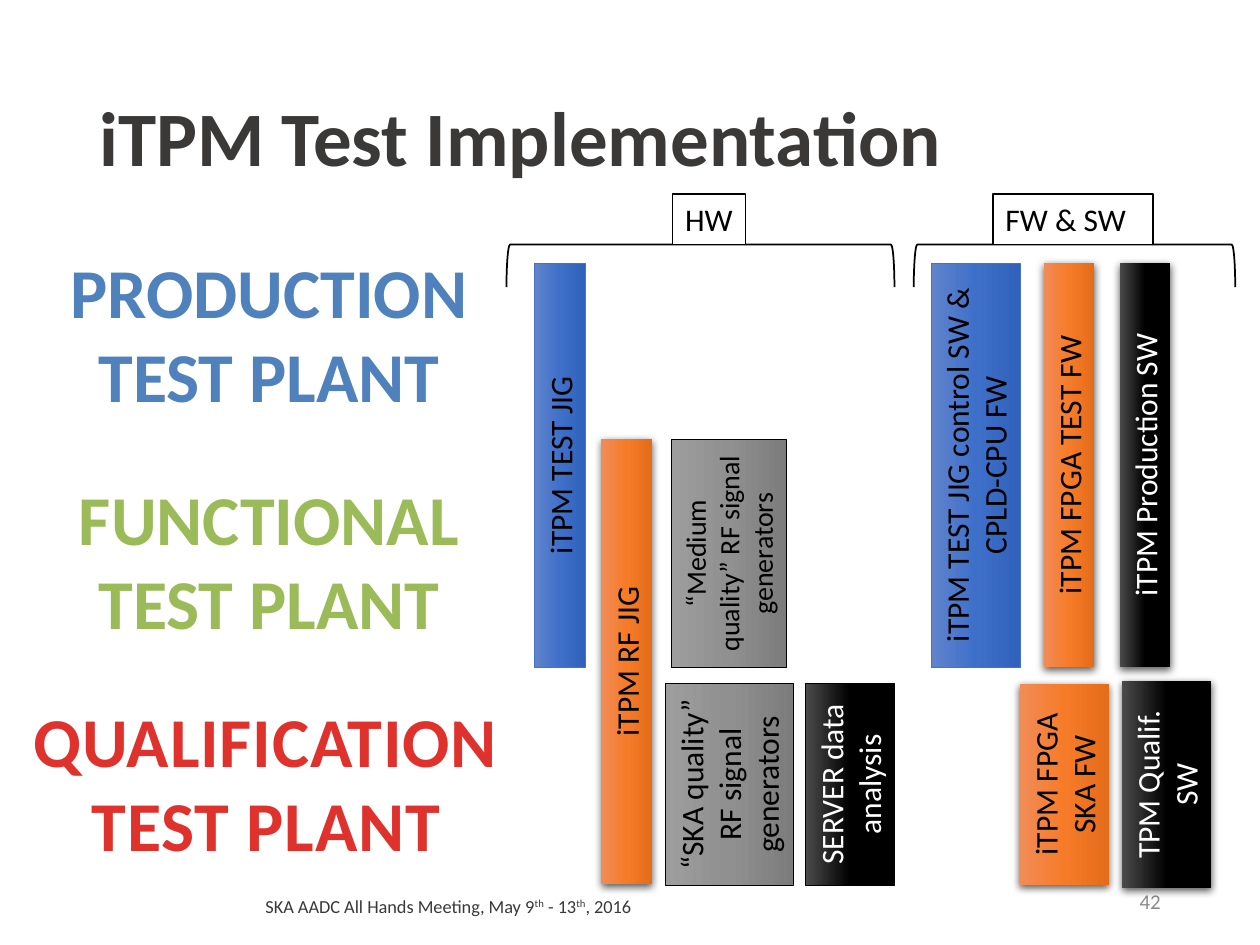
"""Build the iTPM test implementation slide: test plants beside their hardware and software parts."""
import pptx
import pptx.dml.color
import pptx.enum.shapes
import pptx.enum.text
import pptx.oxml
import pptx.util

Cm = pptx.util.Cm
Pt = pptx.util.Pt
ALIGN = pptx.enum.text.PP_ALIGN
ANCHOR = pptx.enum.text.MSO_ANCHOR
SHAPE = pptx.enum.shapes.MSO_SHAPE
NAMESPACE = 'xmlns:a="http://schemas.openxmlformats.org/drawingml/2006/main"'

COLORS = {
    "dark": "3B3838", "number": "8C8C8C", "black": "000000", "white": "FFFFFF",
    "production": "4F81BD", "functional": "9BBB59", "qualification": "E0322D",
    "blue_line": "4472C4",
}
GRADIENTS = {
    "blue": ("6183CB", "3E70CA", "3062BB"),
    "orange": ("F18C57", "F67B28", "E56C19"),
    "gray": ("9D9D9D", "909090", "7C7C7C"),
    "black": ("4B4B4B", "000000", "000000"),
}
TITLE = "iTPM Test Implementation"
PAGE_NUMBER = "42"
FOOTER = [("SKA AADC All Hands Meeting, May 9", False), ("th", True), (" - 13", False),
          ("th", True), (", 2016", False)]
PLANTS = [
    ("PRODUCTION TEST PLANT", "production", (0.76, 4.88, 9.32, 3.68), 0),
    ("QUALIFICATION TEST PLANT", "qualification", (0.3, 13.94, 10.13, 3.68), 50),
    ("FUNCTIONAL TEST PLANT", "functional", (0.76, 9.47, 9.32, 3.68), 0),
]
NARROW, WIDE = 1.02, 1.8
UPPER, LOWER = (5.3, 8.15), (13.78, 4.06)
BARS = [
    ("iTPM TEST JIG", "blue", "blue_line", 10.78, NARROW, UPPER, 18),
    ("iTPM RF JIG", "orange", None, 12.12, NARROW, (8.84, 8.99), 18),
    ("“SKA quality” RF signal generators", "gray", "black", 13.42, 2.57, LOWER, 18),
    ("“Medium quality” RF signal generators", "gray", "black", 13.54, 2.31, (8.86, 4.6), 16),
    ("SERVER data analysis", "black", "black", 16.24, WIDE, LOWER, 18),
    ("iTPM TEST JIG control SW & CPLD-CPU FW", "blue", "blue_line", 18.77, WIDE, UPPER, 18),
    ("iTPM FPGA TEST FW", "orange", None, 21.04, NARROW, UPPER, 18),
    ("iTPM FPGA SKA FW", "orange", None, 20.56, WIDE, LOWER, 18),
    ("iTPM Production SW", "black", None, 22.57, NARROW, UPPER, 18),
    ("TPM Qualif. SW", "black", None, 22.62, WIDE, (13.73, 4.17), 18),
]
GROUPS = [
    ("HW", (13.56, 3.91, 1.47, 1.02), (10.21, 4.93, 7.82, 0.86), False),
    ("FW & SW", (20.02, 3.91, 3.23, 1.02), (18.42, 4.93, 6.48, 0.86), True),
]


def rgb(name):
    return pptx.dml.color.RGBColor.from_string(COLORS[name])


def write(box, runs, size, color, align=ALIGN.LEFT, anchor=ANCHOR.TOP, bold=False,
          wrap=True, spacing=0, line_spacing=None):
    frame = box.text_frame
    frame.word_wrap = wrap
    frame.vertical_anchor = anchor
    para = frame.paragraphs[0]
    para.alignment = align
    if line_spacing:
        para.line_spacing = line_spacing
    for text, raised in runs:
        span = para.add_run()
        span.text = text
        span.font.name = "Calibri"
        span.font.size = Pt(size)
        span.font.bold = bold
        span.font.color.rgb = rgb(color)
        properties = span.font._element
        if raised:
            properties.set("baseline", "30000")
        if spacing:
            properties.set("spc", str(spacing))


def add_text(page, place, runs, size, color, **style):
    box = page.shapes.add_textbox(*map(Cm, place))
    write(box, runs, size, color, **style)


def add_outlined(page, kind, place, line, width, rotation=0):
    left, top, across, down = place
    if rotation:
        left, top = left + (across - down) / 2, top + (down - across) / 2
        across, down = down, across
    shape = page.shapes.add_shape(kind, Cm(left), Cm(top), Cm(across), Cm(down))
    shape.rotation = rotation
    shape.shadow.inherit = False
    shape.fill.background()
    if line:
        shape.line.color.rgb = rgb(line)
        shape.line.width = Pt(width)
    else:
        shape.line.fill.background()
    return shape


def add_gradient(shape, stops):
    marks = "".join(f'<a:gs pos="{place * 50000}"><a:srgbClr val="{value}"/></a:gs>'
                    for place, value in enumerate(stops))
    gradient = pptx.oxml.parse_xml(
        f'<a:gradFill {NAMESPACE} rotWithShape="1"><a:gsLst>{marks}</a:gsLst>'
        '<a:lin ang="5400000" scaled="0"/></a:gradFill>')
    properties = shape._element.spPr
    properties.replace(properties.find(pptx.oxml.ns.qn("a:noFill")), gradient)


def add_shadow(shape):
    effects = shape._element.spPr.find(pptx.oxml.ns.qn("a:effectLst"))
    effects.append(pptx.oxml.parse_xml(
        f'<a:outerShdw {NAMESPACE} blurRad="{Pt(4.5)}" dist="{Pt(1.5)}" dir="5400000" '
        f'algn="ctr" rotWithShape="0"><a:srgbClr val="{COLORS["black"]}">'
        '<a:alpha val="63000"/></a:srgbClr></a:outerShdw>'))


def add_bar(page, text, paint, line, left, width, rows, size):
    top, height = rows
    bar = add_outlined(page, SHAPE.RECTANGLE, (left, top, width, height), line, 0.5, 270)
    add_gradient(bar, GRADIENTS[paint])
    if not line:
        add_shadow(bar)
    ink = "white" if paint == "black" else "black"
    write(bar, [(text, False)], size, ink, align=ALIGN.CENTER)


def add_group(page, text, label_place, bracket_place, wrap):
    add_outlined(page, SHAPE.LEFT_BRACKET, bracket_place, "black", 1, 90)
    label = add_outlined(page, SHAPE.RECTANGLE, label_place, "black", 1)
    label.fill.solid()
    label.fill.fore_color.rgb = rgb("white")
    write(label, [(text, False)], 18, "black", wrap=wrap)


def main():
    deck = pptx.Presentation()
    deck.slide_width, deck.slide_height = Cm(25.4), Cm(19.05)
    page = deck.slides.add_slide(deck.slide_layouts[6])
    add_text(page, (4.06, 17.75, 9.96, 1.02), FOOTER, 10.5, "dark",
             align=ALIGN.CENTER, anchor=ANCHOR.MIDDLE)
    add_text(page, (1.75, 1.02, 21.9, 3.68), [(TITLE, False)], 44, "dark",
             anchor=ANCHOR.MIDDLE, bold=True, line_spacing=0.9)
    add_text(page, (17.93, 17.65, 5.72, 1.02), [(PAGE_NUMBER, False)], 12, "number",
             align=ALIGN.RIGHT, anchor=ANCHOR.MIDDLE)
    for text, color, place, spacing in PLANTS:
        add_text(page, place, [(text, False)], 40, color, align=ALIGN.CENTER,
                 bold=True, spacing=spacing)
    for bar in BARS:
        add_bar(page, *bar)
    for group in GROUPS:
        add_group(page, *group)
    deck.save("out.pptx")


if __name__ == "__main__":
    main()
